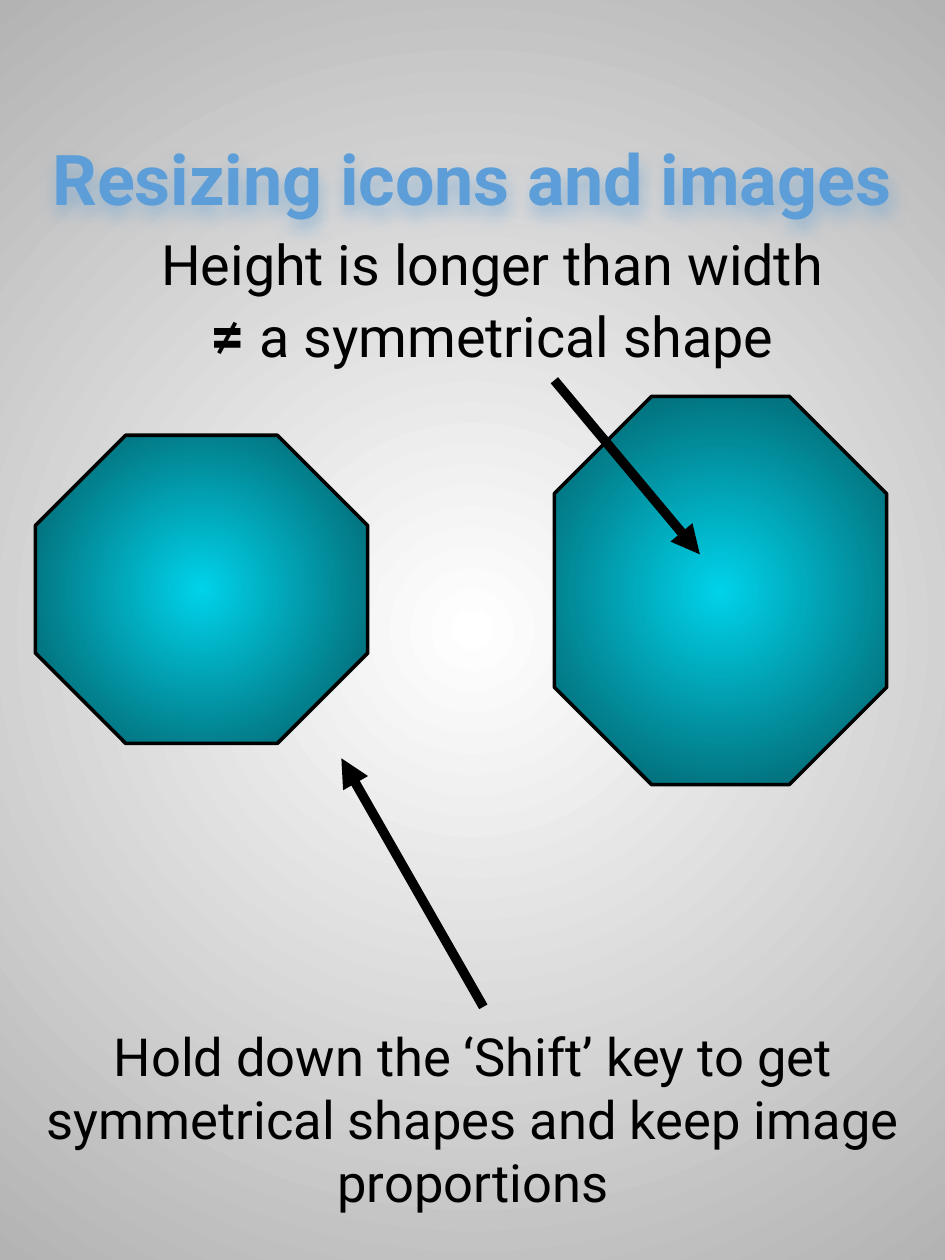
from pptx import Presentation
from pptx.dml.color import RGBColor
from pptx.enum.shapes import MSO_CONNECTOR, MSO_SHAPE
from pptx.enum.text import MSO_ANCHOR, PP_ALIGN
from pptx.oxml import parse_xml
from pptx.oxml.ns import nsdecls
from pptx.util import Inches, Pt

FONT = "Roboto"
BLACK = "000000"
BLUE = "5D9ED8"


def color(code):
    return RGBColor.from_string(code)


def node(body):
    """Parse one DrawingML element, given without its brackets' namespace."""
    tag, rest = body[1:].split(" ", 1)
    return parse_xml(f"<{tag} {nsdecls('a')} {rest}")


def radial(fill, root, inner, outer):
    """Fill from the centre outwards; root is the element that holds the fill."""
    fill.gradient()
    for stop, code in zip(fill.gradient_stops, (inner, outer)):
        stop.color.rgb = color(code)
    lin = root.xpath(".//a:gradFill/a:lin")[0]
    path = node('<a:path path="circle">'
                '<a:fillToRect l="50000" t="50000" r="50000" b="50000"/></a:path>')
    lin.getparent().replace(lin, path)


def octagon(slide, *box):
    shape = slide.shapes.add_shape(MSO_SHAPE.OCTAGON, *map(Inches, box))
    shape.shadow.inherit = False
    radial(shape.fill, shape.element.spPr, "00D2E9", "045962")
    shape.line.color.rgb = color(BLACK)
    shape.line.width = Pt(2.25)


def arrow(slide, start, end):
    link = slide.shapes.add_connector(
        MSO_CONNECTOR.STRAIGHT, *map(Inches, start + end))
    link.line.color.rgb = color(BLACK)
    link.line.width = Pt(6)
    link.line._get_or_add_ln().append(node('<a:tailEnd type="triangle"/>'))
    link.element.spPr.append(node("<a:effectLst />"))


def text(slide, box, lines, size, code=BLACK, bold=False, anchor=MSO_ANCHOR.TOP):
    """Add centred lines; each line is a list of (words, format changes)."""
    shape = slide.shapes.add_textbox(*map(Inches, box))
    frame = shape.text_frame
    frame.word_wrap = True
    frame.vertical_anchor = anchor
    frame.margin_left = frame.margin_right = Inches(0.1)
    frame.margin_top = frame.margin_bottom = Inches(0.1)
    for i, line in enumerate(lines):
        para = frame.add_paragraph() if i else frame.paragraphs[0]
        para.alignment = PP_ALIGN.CENTER
        for words, change in line:
            run = para.add_run()
            run.text = words
            run.font.name = FONT
            run.font.size = Pt(change.get("size", size))
            run.font.bold = change.get("bold", bold)
            run.font.color.rgb = color(code)
    return shape


def glow(shape, code):
    """Put a soft coloured shadow just below the text."""
    shape.element.spPr.append(node(
        f'<a:effectLst ><a:outerShdw blurRad="{Inches(0.14)}" dist="{Inches(0.08)}" '
        f'dir="5400000" algn="bl" rotWithShape="0"><a:srgbClr val="{code}">'
        '<a:alpha val="50000"/></a:srgbClr></a:outerShdw></a:effectLst>'))


def main():
    deck = Presentation()
    deck.slide_width, deck.slide_height = Inches(8.25), Inches(11)
    slide = deck.slides.add_slide(deck.slide_layouts[6])
    radial(slide.background.fill, slide.element, "FFFFFF", "B3B3B3")

    octagon(slide, 0.31, 3.8, 2.9, 2.69)
    octagon(slide, 4.84, 3.46, 2.9, 3.39)

    hint = "Hold down the ‘Shift’ key to get symmetrical shapes and keep image proportions"
    text(slide, (0.08, 8.84, 8.1, 2), [[(hint, {})]], 33)
    arrow(slide, (4.22, 8.79), (2.98, 6.62))

    note = [[("Height is longer than width", {})],
            [("≠", {"size": 38, "bold": True}), (" a symmetrical shape", {})]]
    text(slide, (0.88, 1.91, 6.84, 1.52), note, 35)
    arrow(slide, (4.84, 3.32), (6.11, 4.84))

    title = text(slide, (0, 0.84, 8.25, 1.41), [[("Resizing icons and images", {})]],
                 44, code=BLUE, bold=True, anchor=MSO_ANCHOR.MIDDLE)
    glow(title, BLUE)
    deck.save("out.pptx")


if __name__ == "__main__":
    main()
